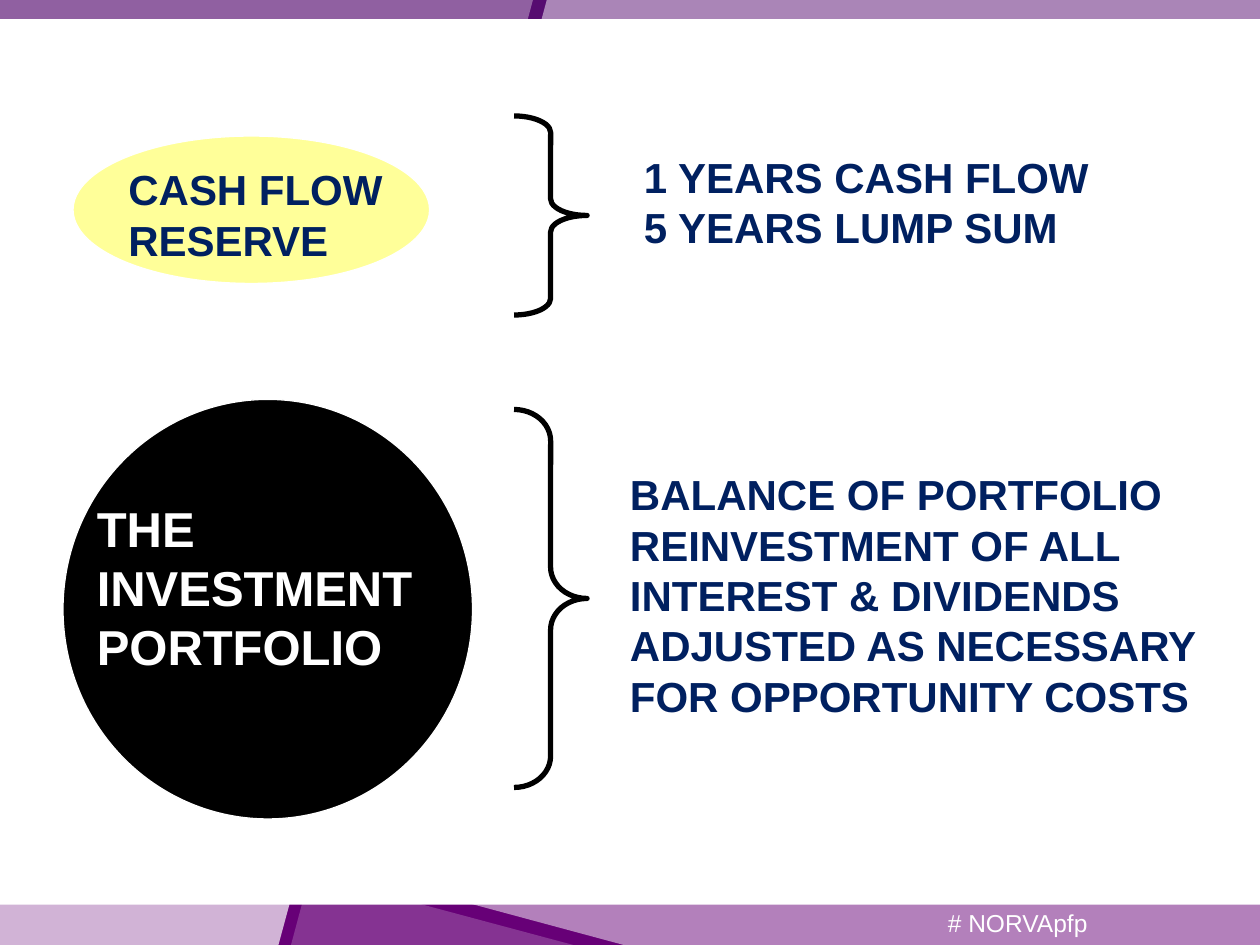
from lxml import etree
from pptx import Presentation
from pptx import util as u
from pptx.dml.color import RGBColor
from pptx.enum import shapes, text
from pptx.oxml.ns import qn

WHITE, BLACK, NAVY, YELLOW = "FFFFFF", "000000", "002060", "FFFF99"


def color(hex_code):
    return RGBColor.from_string(hex_code)


class SlideBuilder:
    font_name = "Arial"
    line_height = 1.2

    def __init__(self, slide):
        self.slide = slide

    def shape(self, kind, box, fill=None, line=None, line_width=0.75):
        shape = self.slide.shapes.add_shape(kind, *map(u.Inches, box))
        self.style(shape, fill, line, line_width)
        return shape

    def style(self, shape, fill, line, line_width=0.75):
        shape.shadow.inherit = False
        if fill:
            shape.fill.solid()
            shape.fill.fore_color.rgb = color(fill)
        else:
            shape.fill.background()
        if line:
            shape.line.color.rgb = color(line)
            shape.line.width = u.Pt(line_width)
        else:
            shape.line.fill.background()

    def tint(self, points, opacity):
        """Add a translucent white polygon; opacity is in percent."""
        start, *others = [(u.Inches(x), u.Inches(y)) for x, y in points]
        builder = self.slide.shapes.build_freeform(*start)
        builder.add_line_segments(others, close=True)
        shape = builder.convert_to_shape()
        self.style(shape, WHITE, None)
        fill_color = shape.fill._xPr.find(qn("a:solidFill"))[0]
        etree.SubElement(fill_color, qn("a:alpha"), val=str(opacity * 1000))

    def brace(self, top, height, curve):
        shape = self.shape(shapes.MSO_SHAPE.RIGHT_BRACE, (4.08, top, 0.58, height),
                           line=BLACK, line_width=3)
        shape.adjustments[0] = curve
        shape.adjustments[1] = 0.5

    def label(self, box, content, size, font_color, bold=True, inset=0.1):
        shape = self.slide.shapes.add_textbox(*map(u.Inches, box))
        frame = shape.text_frame
        frame.word_wrap = True
        frame.margin_left = u.Inches(inset)
        frame.text = content
        for paragraph in frame.paragraphs:
            paragraph.line_spacing = u.Pt(size * self.line_height)
            for run in paragraph.runs:
                run.font.name = self.font_name
                run.font.size = u.Pt(size)
                run.font.bold = bold
                run.font.color.rgb = color(font_color)
        return shape


def add_bands(builder):
    rectangle = shapes.MSO_SHAPE.RECTANGLE
    builder.shape(rectangle, (0, 0, 10, 0.15), "560C70")
    builder.shape(rectangle, (0, 7.18, 10, 0.32), "670077")
    footer = builder.label((6.4, 7.12, 2.33, 0.4), "# NORVApfp", 14, WHITE, bold=False)
    footer.text_frame.vertical_anchor = text.MSO_ANCHOR.MIDDLE
    footer.text_frame.paragraphs[0].alignment = text.PP_ALIGN.RIGHT
    builder.tint([(0, 0.53), (3.82, 1.56), (2.21, 7.5), (0, 7.5)], 70)
    builder.tint([(0, 0), (4.23, 0), (3.84, 1.46), (0, 0.43)], 35)
    builder.tint([(2.46, 6.94), (4.55, 7.5), (2.31, 7.5)], 20)
    builder.tint([(4.34, 0), (10, 0), (10, 7.5), (4.95, 7.5), (2.5, 6.84)], 50)


def main():
    presentation = Presentation()
    presentation.slide_width = u.Inches(10)
    presentation.slide_height = u.Inches(7.5)
    builder = SlideBuilder(presentation.slides.add_slide(presentation.slide_layouts[6]))
    add_bands(builder)

    oval = shapes.MSO_SHAPE.OVAL
    builder.shape(oval, (0.58, 1.08, 2.83, 1.17), YELLOW, WHITE)
    builder.shape(oval, (0.5, 3.17, 3.25, 3.33), BLACK, WHITE)
    builder.label((0.92, 1.25, 2.58, 0.91), "CASH FLOW RESERVE", 24, NAVY)
    builder.label((0.67, 3.91, 2.92, 1.5), "THE\vINVESTMENT PORTFOLIO", 28, WHITE)

    builder.brace(3.25, 3, 0.429)
    builder.brace(0.92, 1.58, 0.226)

    builder.label((4.92, 1.15, 4.67, 0.91),
                  "1 YEARS CASH FLOW\n5 YEARS LUMP SUM", 24, NAVY, inset=0.19)
    builder.label((4.83, 3.67, 5, 2.12),
                  "BALANCE OF PORTFOLIO\n"
                  "REINVESTMENT OF ALL INTEREST & DIVIDENDS\n"
                  "ADJUSTED AS NECESSARY FOR OPPORTUNITY COSTS",
                  24, NAVY, inset=0.17)

    presentation.save("out.pptx")


if __name__ == "__main__":
    main()
